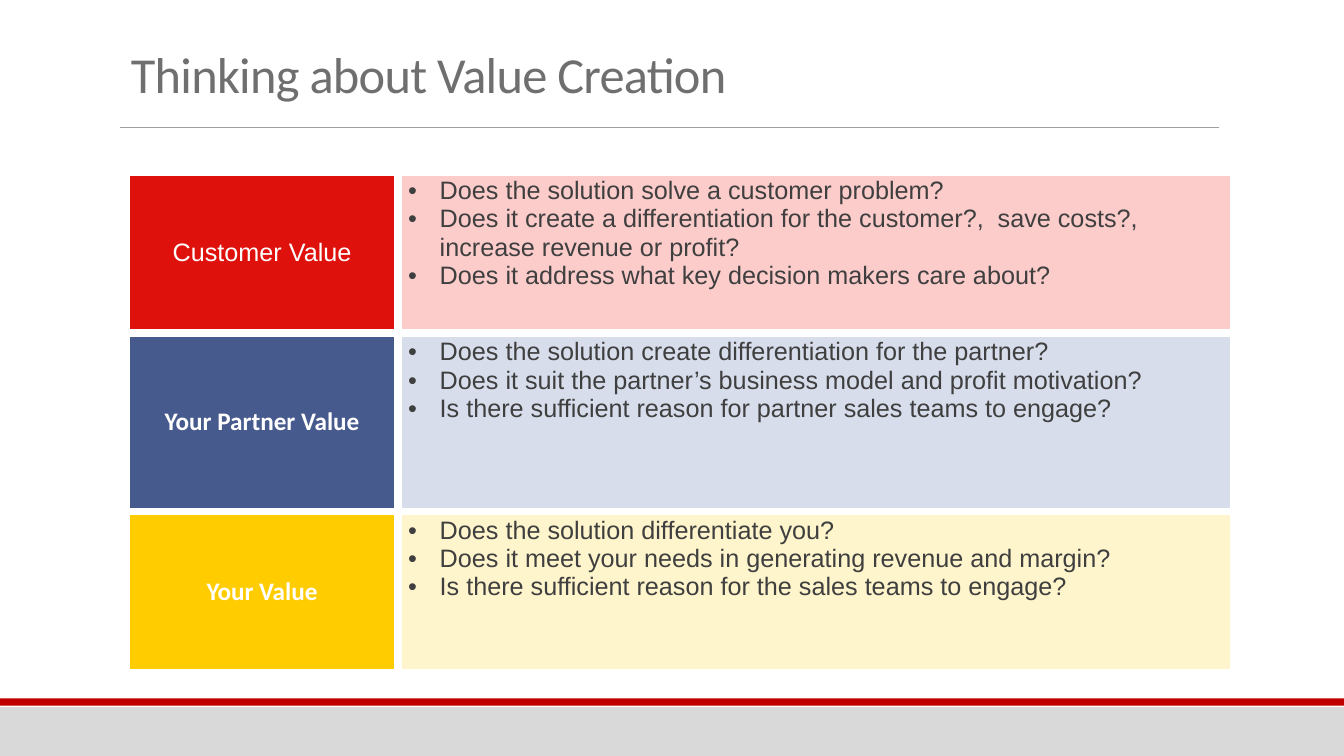
"""Builds the value creation slide: a title above a three-row table of questions."""
from lxml.etree import SubElement
from pptx import Presentation
from pptx.dml.color import RGBColor
from pptx.enum.shapes import MSO_CONNECTOR, MSO_SHAPE
from pptx.enum.text import MSO_ANCHOR, PP_ALIGN
from pptx.oxml import parse_xml
from pptx.oxml.ns import nsdecls, qn
from pptx.util import Pt

COLORS = {
    "footer": "D9D9D9", "stripe": "C00000", "rule": "9F9F9F", "title": "6F6F6F",
    "white": "FFFFFF", "body": "3F3F3F",
    "red": "DF110C", "pale red": "FCCCCB",
    "blue": "475A8D", "pale blue": "D7DDEB",
    "yellow": "FFCC00", "pale yellow": "FFF5CC",
}
ROWS = [
    ("Customer Value", "Arial", False, "red", 115.2, [
        "Does the solution solve a customer problem?",
        "Does it create a differentiation for the customer?,  save costs?, increase revenue or profit?",
        "Does it address what key decision makers care about?",
    ]),
    ("Your Partner Value", "Calibri", True, "blue", 127.5, [
        "Does the solution create differentiation for the partner?",
        "Does it suit the partner’s business model and profit motivation?",
        "Is there sufficient reason for partner sales teams to engage?",
    ]),
    ("Your Value", "Calibri", True, "yellow", 115.2, [
        "Does the solution differentiate you?",
        "Does it meet your needs in generating revenue and margin?",
        "Is there sufficient reason for the sales teams to engage?",
    ]),
]


def add_span(para, text, size, font, color, bold=False):
    span = para.add_run()
    span.text = text
    span.font.size = Pt(size)
    span.font.name = font
    span.font.bold = bold
    span.font.color.rgb = RGBColor.from_string(COLORS[color])
    return span


def paint_cell(cell, color):
    cell.fill.solid()
    cell.fill.fore_color.rgb = RGBColor.from_string(COLORS[color])
    properties = cell._tc.get_or_add_tcPr()
    for index, side in enumerate(("lnL", "lnR", "lnT", "lnB")):
        properties.insert(index, parse_xml(
            f'<a:{side} {nsdecls("a")} w="{Pt(6)}"><a:solidFill>'
            f'<a:srgbClr val="{COLORS["white"]}"/></a:solidFill></a:{side}>'))


deck = Presentation()
deck.slide_width, deck.slide_height = Pt(960), Pt(540)
page = deck.slides.add_slide(deck.slide_layouts[6])

for color, top, height in (("footer", 505.2, 34.8), ("stripe", 498.8, 5.2)):
    band = page.shapes.add_shape(MSO_SHAPE.RECTANGLE, Pt(0), Pt(top), Pt(960), Pt(height))
    band.shadow.inherit = False
    band.fill.solid()
    band.fill.fore_color.rgb = RGBColor.from_string(COLORS[color])
    band.line.fill.background()

rule = page.shapes.add_connector(MSO_CONNECTOR.STRAIGHT, Pt(86), Pt(91.2), Pt(870.5), Pt(91.2))
rule.line.color.rgb = RGBColor.from_string(COLORS["rule"])
rule.line.width = Pt(0.5)
SubElement(rule._element.spPr, qn("a:effectLst"))

title = page.shapes.add_textbox(Pt(86.4), Pt(22.3), Pt(792), Pt(55.5)).text_frame
title.word_wrap = True
title.vertical_anchor = MSO_ANCHOR.BOTTOM
heading = title.paragraphs[0]
heading.line_spacing = 0.85
span = add_span(heading, "Thinking about Value Creation", 36, "Calibri", "title")
span.font._element.set("spc", "-50")

heights = [row[4] for row in ROWS]
table = page.shapes.add_table(
    len(ROWS), 2, Pt(90), Pt(122.7), Pt(791), Pt(sum(heights))).table
table.first_row = table.horz_banding = False
table.columns[0].width, table.columns[1].width = Pt(194.4), Pt(596.6)

for index, (label, font, bold, color, height, questions) in enumerate(ROWS):
    table.rows[index].height = Pt(height)
    name_cell, question_cell = table.cell(index, 0), table.cell(index, 1)
    paint_cell(name_cell, color)
    paint_cell(question_cell, f"pale {color}")

    name_cell.vertical_anchor = MSO_ANCHOR.MIDDLE
    para = name_cell.text_frame.paragraphs[0]
    para.alignment = PP_ALIGN.CENTER
    add_span(para, label, 18, font, "white", bold)

    body = question_cell.text_frame
    for number, question in enumerate(questions):
        para = body.add_paragraph() if number else body.paragraphs[0]
        properties = para._p.get_or_add_pPr()
        properties.set("marL", str(Pt(22.5)))
        properties.set("indent", str(-Pt(22.5)))
        SubElement(properties, qn("a:buFont"), typeface="Arial")
        SubElement(properties, qn("a:buChar"), char="•")
        add_span(para, question, 18, "Arial", "body")

deck.save("out.pptx")
